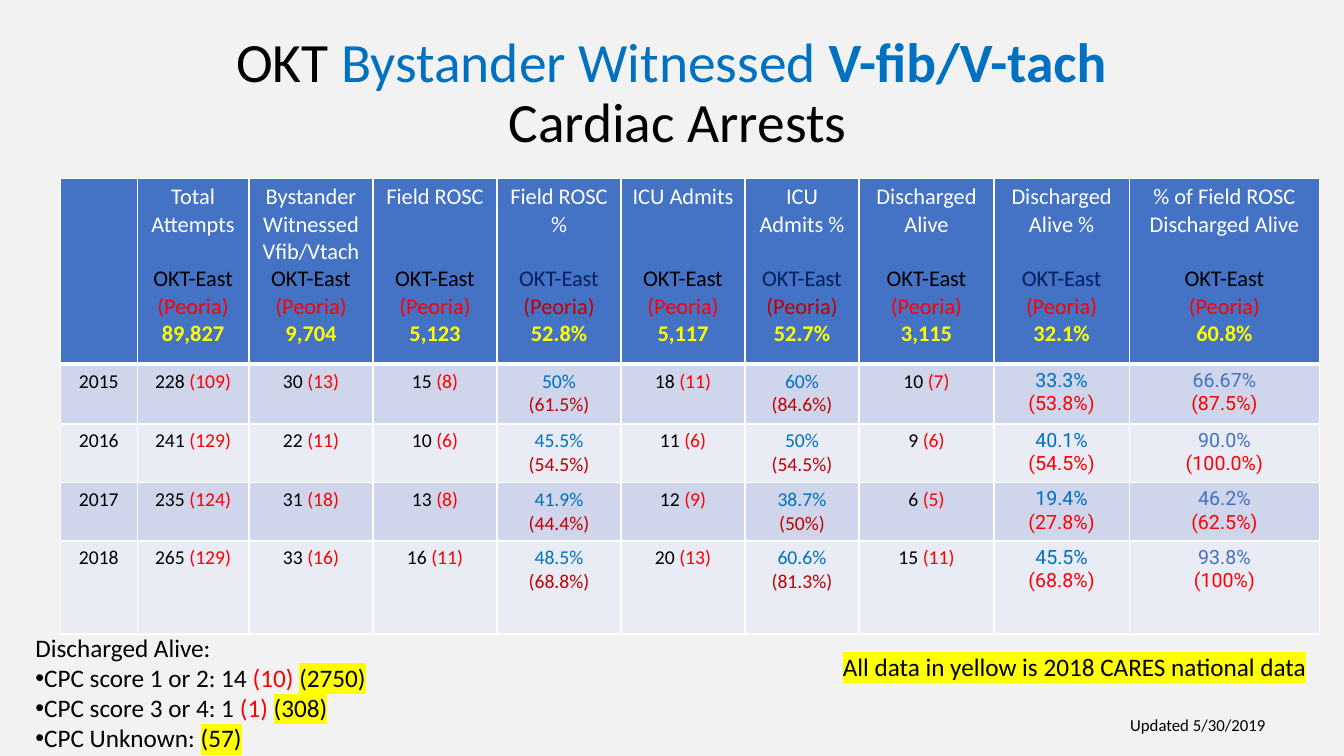
from dataclasses import dataclass

from lxml import etree
from pptx import Presentation
from pptx.dml.color import RGBColor
from pptx.enum.text import MSO_ANCHOR, MSO_AUTO_SIZE, PP_ALIGN
from pptx.oxml.ns import qn
from pptx.util import Inches, Pt

CENTER, LEFT = PP_ALIGN.CENTER, PP_ALIGN.LEFT
MIDDLE, TOP = MSO_ANCHOR.MIDDLE, MSO_ANCHOR.TOP
NO_AUTOFIT = MSO_AUTO_SIZE.NONE

SLIDE_WIDTH, SLIDE_HEIGHT = Inches(13.33), Inches(7.5)
COLORS = {
    "background": "F2F2F2", "header": "4472C4", "odd_row": "CFD5EA", "even_row": "E9EBF5",
    "white": "FFFFFF", "black": "000000", "navy": "002060", "blue": "0070C0",
    "steel": "4472C4", "red": "FF0000", "dark_red": "C00000", "yellow": "FFFF00",
}
HEADER_SIZE, DATA_SIZE, NOTE_SIZE = 16, 14, 18
HEADER_LINE = HEADER_SIZE * 1.22
HEADER_LABEL_LINES = 3
PROVIDER = "OKT"


@dataclass(frozen=True)
class Box:
    """Position and size in percent of the slide's width and height."""
    left: float
    top: float
    width: float
    height: float

    def lengths(self) -> tuple[int, int, int, int]:
        return (int(SLIDE_WIDTH * self.left / 100), int(SLIDE_HEIGHT * self.top / 100),
                int(SLIDE_WIDTH * self.width / 100), int(SLIDE_HEIGHT * self.height / 100))


@dataclass(frozen=True)
class Column:
    """A measure; label_lines counts the lines its label fills once wrapped."""
    label: str
    width: float
    national: str
    label_lines: int
    region_color: str = "black"
    peoria_header_color: str = "red"
    value_color: str = "black"
    peoria_color: str = "red"
    font: str = "Calibri"


@dataclass(frozen=True)
class Run:
    text: str
    color: str = "black"
    bold: bool = False
    highlight: str | None = None


TITLE_BOX = Box(6.23, -2.27, 88.37, 21.6)
TABLE_BOX = Box(4.5, 23.6, 93.7, 60.27)
NOTES_BOX = Box(1.88, 82.93, 26.71, 17.47)
LEGEND_BOX = Box(61.97, 85.47, 38.03, 5.33)
UPDATED_BOX = Box(83.35, 93.87, 16.5, 4)

TITLE = [
    [Run(f"{PROVIDER} "), Run("Bystander Witnessed ", "blue"),
     Run("V-fib/V-tach ", "blue", bold=True)],
    [Run("Cardiac Arrests")],
]
NOTES = [
    [Run("Discharged Alive:")],
    [Run("CPC score 1 or 2: 14 "), Run("(10) ", "red"), Run("(2750)", highlight="yellow")],
    [Run("CPC score 3 or 4: 1 "), Run("(1) ", "red"), Run("(308)", highlight="yellow")],
    [Run("CPC Unknown: "), Run("(57)", highlight="yellow")],
]
LEGEND = [[Run("All data in yellow is 2018 CARES national data", highlight="yellow")]]
UPDATED = [[Run("Updated 5/30/2019")]]

RATE = {"region_color": "navy", "peoria_header_color": "dark_red",
        "value_color": "blue", "peoria_color": "dark_red"}
COLUMNS = [
    Column("", 0.76, "", 0),
    Column("Total\nAttempts", 1.11, "89,827", 2),
    Column("Bystander Witnessed Vfib/Vtach", 1.23, "9,704", 3),
    Column("Field ROSC", 1.23, "5,123", 1),
    Column("Field ROSC %", 1.23, "52.8%", 2, **RATE),
    Column("ICU Admits", 1.23, "5,117", 1),
    Column("ICU Admits %", 1.13, "52.7%", 2, **RATE),
    Column("Discharged Alive", 1.34, "3,115", 2),
    Column("Discharged Alive %", 1.34, "32.1%", 2, region_color="navy",
           value_color="blue", font="Roboto"),
    Column("% of Field ROSC\nDischarged Alive", 1.89, "60.8%", 2,
           value_color="steel", font="Roboto"),
]
ROW_HEIGHTS = [1.84, 0.59, 0.58, 0.58, 0.92]
YEARS = [
    ["2015", "228 (109)", "30 (13)", "15 (8)", "50%\n(61.5%)", "18 (11)", "60%\n(84.6%)",
     "10 (7)", "33.3%\n(53.8%)", "66.67%\n(87.5%)"],
    ["2016", "241 (129)", "22 (11)", "10 (6)", "45.5% (54.5%)", "11 (6)", "50%\n(54.5%)",
     "9 (6)", "40.1%\n(54.5%)", "90.0%\n(100.0%)"],
    ["2017", "235 (124)", "31 (18)", "13 (8)", "41.9% (44.4%)", "12 (9)", "38.7%\n(50%)",
     "6 (5)", "19.4%\n(27.8%)", "46.2%\n(62.5%)"],
    ["2018", "265 (129)", "33 (16)", "16 (11)", "48.5% (68.8%)", "20 (13)", "60.6%\n(81.3%)",
     "15 (11)", "45.5%\n(68.8%)", "93.8%\n(100%)"],
]


def write_run(paragraph, text: str, *, size: float, color: str = "black", bold: bool = False,
              font: str = "Calibri", highlight: str | None = None) -> None:
    run = paragraph.add_run()
    run.text = text
    run.font.size = Pt(size)
    run.font.bold = bold
    run.font.name = font
    run.font.color.rgb = RGBColor.from_string(COLORS[color])
    if highlight:
        mark = etree.Element(qn("a:highlight"))
        etree.SubElement(mark, qn("a:srgbClr"), val=COLORS[highlight])
        run.font._element.find(qn("a:solidFill")).addnext(mark)


def write_paragraphs(text_frame, paragraphs: list[list[Run]], *, size: float,
                     alignment=LEFT, line_spacing: float = 1.0, font: str = "Calibri") -> None:
    for index, runs in enumerate(paragraphs):
        paragraph = text_frame.add_paragraph() if index else text_frame.paragraphs[0]
        paragraph.alignment = alignment
        paragraph.line_spacing = line_spacing
        paragraph.space_before = Pt(0)
        for run in runs:
            write_run(paragraph, run.text, size=size, color=run.color, bold=run.bold,
                      font=font, highlight=run.highlight)


def set_bullet(paragraph, bullet: str | None) -> None:
    properties = paragraph._p.get_or_add_pPr()
    properties.set("marL", "0")
    properties.set("indent", "0")
    if bullet:
        etree.SubElement(properties, qn("a:buFont"), typeface="Arial")
        etree.SubElement(properties, qn("a:buChar"), char=bullet)
    else:
        etree.SubElement(properties, qn("a:buNone"))


def place(shape, box: Box) -> None:
    shape.left, shape.top, shape.width, shape.height = box.lengths()
    shape.text_frame.word_wrap = True
    shape.text_frame.auto_size = NO_AUTOFIT


def style_cell(cell, fill: str, *, bottom_width: float = 1) -> None:
    properties = cell._tc.get_or_add_tcPr()
    for side, width in {"L": 1, "R": 1, "T": 1, "B": bottom_width}.items():
        line = etree.SubElement(properties, qn(f"a:ln{side}"), w=str(Pt(width)))
        solid = etree.SubElement(line, qn("a:solidFill"))
        etree.SubElement(solid, qn("a:srgbClr"), val=COLORS["white"])
    cell.fill.solid()
    cell.fill.fore_color.rgb = RGBColor.from_string(COLORS[fill])


def fill_header_cell(cell, column: Column) -> None:
    style_cell(cell, "header", bottom_width=3)
    if not column.label:
        return
    labels = [[Run(line, "white")] for line in column.label.split("\n")]
    figures = [[Run(f"{PROVIDER}-East", column.region_color)],
               [Run("(Peoria)", column.peoria_header_color)],
               [Run(column.national, "yellow", bold=True)]]
    write_paragraphs(cell.text_frame, labels + figures, size=HEADER_SIZE, alignment=CENTER)
    gap = (HEADER_LABEL_LINES - column.label_lines) * HEADER_LINE
    cell.text_frame.paragraphs[len(labels)].space_before = Pt(gap)


def fill_data_cell(cell, text: str, column: Column, fill: str) -> None:
    style_cell(cell, fill)
    paragraphs = []
    for line in text.split("\n"):
        value, bracket, rest = line.partition("(")
        runs = [Run(value, column.value_color), Run(bracket + rest, column.peoria_color)]
        paragraphs.append([run for run in runs if run.text])
    write_paragraphs(cell.text_frame, paragraphs, size=DATA_SIZE, alignment=CENTER,
                     font=column.font)


def add_results_table(slide) -> None:
    left, top, width, height = TABLE_BOX.lengths()
    table = slide.shapes.add_table(len(ROW_HEIGHTS), len(COLUMNS), left, top, width, height).table
    table.horz_banding = False
    for row, share in zip(table.rows, ROW_HEIGHTS):
        row.height = int(height * share / sum(ROW_HEIGHTS))
    total_width = sum(column.width for column in COLUMNS)
    for index, column in enumerate(COLUMNS):
        table.columns[index].width = int(width * column.width / total_width)
        fill_header_cell(table.cell(0, index), column)
        for row_index, year in enumerate(YEARS, start=1):
            fill = "odd_row" if row_index % 2 else "even_row"
            fill_data_cell(table.cell(row_index, index), year[index], column, fill)


def add_text(slide, box: Box, paragraphs: list[list[Run]], size: float) -> None:
    shape = slide.shapes.add_textbox(*box.lengths())
    place(shape, box)
    write_paragraphs(shape.text_frame, paragraphs, size=size)


def main() -> None:
    presentation = Presentation()
    presentation.slide_width, presentation.slide_height = SLIDE_WIDTH, SLIDE_HEIGHT
    slide = presentation.slides.add_slide(presentation.slide_layouts[1])
    slide.background.fill.solid()
    slide.background.fill.fore_color.rgb = RGBColor.from_string(COLORS["background"])

    title, notes = slide.shapes.title, slide.placeholders[1]
    place(title, TITLE_BOX)
    title.text_frame.vertical_anchor = MIDDLE
    title.text_frame.margin_top, title.text_frame.margin_bottom = Inches(0.6), 0
    write_paragraphs(title.text_frame, TITLE, size=39.6, alignment=CENTER, line_spacing=0.9)

    add_results_table(slide)
    add_text(slide, UPDATED_BOX, UPDATED, 12)
    place(notes, NOTES_BOX)
    notes.text_frame.vertical_anchor = TOP
    write_paragraphs(notes.text_frame, NOTES, size=NOTE_SIZE)
    for index, paragraph in enumerate(notes.text_frame.paragraphs):
        set_bullet(paragraph, "•" if index else None)
    add_text(slide, LEGEND_BOX, LEGEND, NOTE_SIZE)
    presentation.save("out.pptx")


if __name__ == "__main__":
    main()
